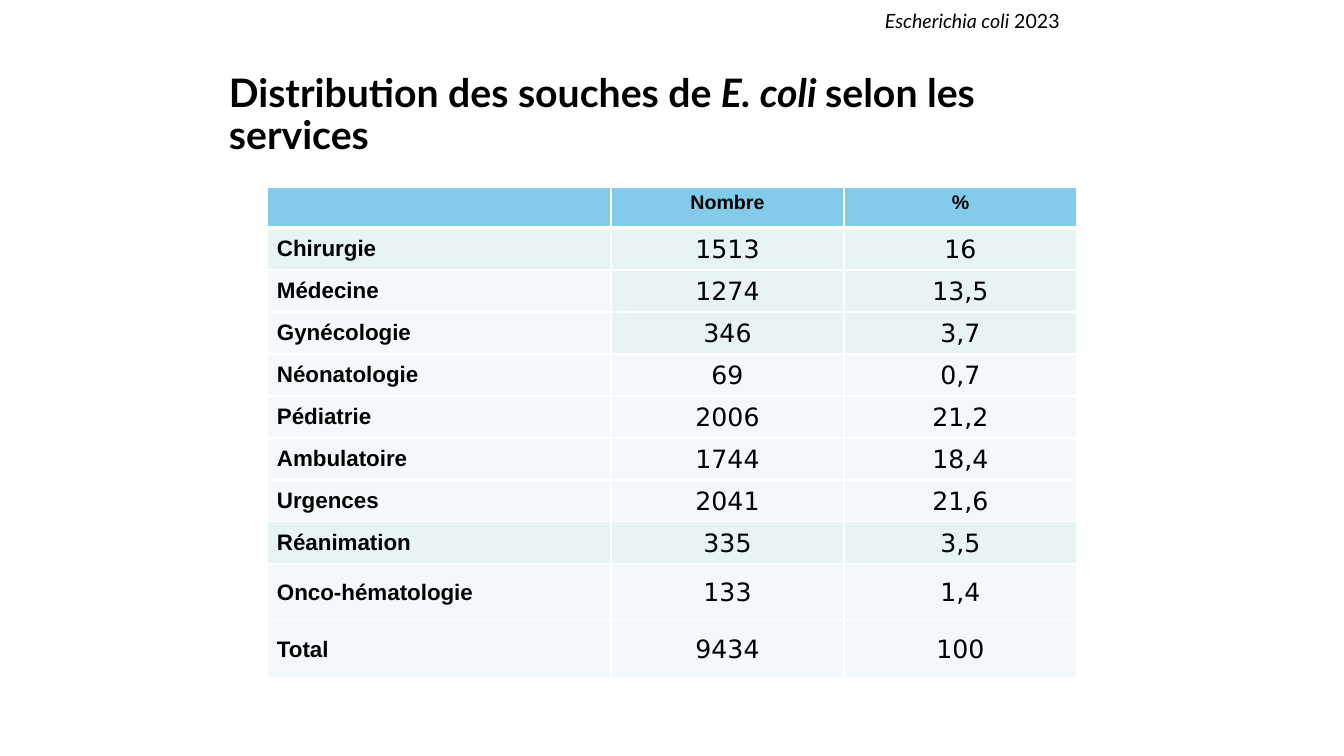
import lxml.etree
import pptx
import pptx.dml.color
import pptx.enum.text
import pptx.oxml.ns
import pptx.util

ALIGN = pptx.enum.text.PP_ALIGN
ANCHOR = pptx.enum.text.MSO_ANCHOR
EMU_PER_PX = 914400 / 100.8

COLORS = {
    "text": "000000",
    "border": "FFFFFF",
    "header": "83CBEB",
    "tint": "E7F3F4",
    "pale": "F3F9FA",
}

# Service, count, percentage, label fill, value fill
SERVICES = [
    ("Chirurgie", "1513", "16", "tint", "tint"),
    ("Médecine", "1274", "13,5", "pale", "tint"),
    ("Gynécologie", "346", "3,7", "pale", "tint"),
    ("Néonatologie", "69", "0,7", "pale", "pale"),
    ("Pédiatrie", "2006", "21,2", "pale", "pale"),
    ("Ambulatoire", "1744", "18,4", "pale", "pale"),
    ("Urgences", "2041", "21,6", "pale", "pale"),
    ("Réanimation", "335", "3,5", "tint", "tint"),
    ("Onco-hématologie", "133", "1,4", "pale", "pale"),
    ("Total", "9434", "100", "pale", "pale"),
]
COLUMN_WIDTHS = [344, 233, 233]
ROW_HEIGHTS = [41] + [42] * 8 + [57] * 2


def px(length):
    return pptx.util.Emu(round(length * EMU_PER_PX))


def color(name):
    return pptx.dml.color.RGBColor.from_string(COLORS[name])


class SlideBuilder:
    def __init__(self, presentation):
        self.slide = presentation.slides.add_slide(presentation.slide_layouts[6])

    def add_run(self, paragraph, text, size, font="Lato", bold=False, italic=False):
        run = paragraph.add_run()
        run.text = text
        run.font.size = pptx.util.Pt(size)
        run.font.name = font
        run.font.bold = bold
        run.font.italic = italic
        run.font.color.rgb = color("text")

    def text(self, box, runs, size, bold=False, anchor=ANCHOR.TOP, spacing=1.0):
        shape = self.slide.shapes.add_textbox(*map(px, box))
        frame = shape.text_frame
        frame.word_wrap = True
        frame.vertical_anchor = anchor
        paragraph = frame.paragraphs[0]
        paragraph.line_spacing = spacing
        for text, italic in runs:
            self.add_run(paragraph, text, size, bold=bold, italic=italic)

    def table(self, left, top, widths, heights):
        table = self.slide.shapes.add_table(
            len(heights), len(widths), px(left), px(top),
            px(sum(widths)), px(sum(heights))).table
        for column, width in zip(table.columns, widths):
            column.width = px(width)
        for row, height in zip(table.rows, heights):
            row.height = px(height)
        return table

    def cell(self, cell, text, fill, size, font="Arial", bold=True, align=ALIGN.CENTER,
             anchor=ANCHOR.MIDDLE, margins=(10, 5, 10, 5), top=1, bottom=1):
        cell.fill.solid()
        cell.fill.fore_color.rgb = color(fill)
        cell.vertical_anchor = anchor
        (cell.margin_left, cell.margin_top,
         cell.margin_right, cell.margin_bottom) = map(px, margins)
        paragraph = cell.text_frame.paragraphs[0]
        paragraph.alignment = align
        if text:
            self.add_run(paragraph, text, size, font, bold)
        self.borders(cell, {"lnL": 1, "lnR": 1, "lnT": top, "lnB": bottom})

    def borders(self, cell, widths):
        qn = pptx.oxml.ns.qn
        properties = cell._tc.get_or_add_tcPr()
        for index, (side, width) in enumerate(widths.items()):
            line = lxml.etree.Element(qn(f"a:{side}"), w=str(pptx.util.Pt(width)))
            fill = lxml.etree.SubElement(line, qn("a:solidFill"))
            lxml.etree.SubElement(fill, qn("a:srgbClr"), val=COLORS["border"])
            properties.insert(index, line)


def main():
    presentation = pptx.Presentation()
    presentation.slide_width = px(1344)
    presentation.slide_height = px(756)
    builder = SlideBuilder(presentation)

    # Title
    builder.text(
        (219, 53, 907, 126),
        [("Distribution des souches de ", False), ("E. coli ", True),
         ("selon les services", False)],
        28, bold=True, anchor=ANCHOR.MIDDLE, spacing=0.9)

    # Table header
    table = builder.table(267, 187, COLUMN_WIDTHS, ROW_HEIGHTS)
    for column, heading in enumerate(["", "Nombre", "%"]):
        builder.cell(table.cell(0, column), heading, "header", 14,
                     anchor=ANCHOR.TOP, bottom=3)

    # Table body
    for row, (service, count, percent, label_fill, value_fill) in enumerate(SERVICES, 1):
        top = 3 if row == 1 else 1
        builder.cell(table.cell(row, 0), service, label_fill, 16,
                     align=ALIGN.LEFT, top=top)
        for column, value in enumerate([count, percent], 1):
            builder.cell(table.cell(row, column), value, value_fill, 18, "DejaVu Sans",
                         bold=False, margins=(1, 1, 1, 0), top=top)

    # Running head
    builder.text((875, 4, 254, 34), [("Escherichia coli ", True), ("2023", False)], 14)

    presentation.save("out.pptx")


if __name__ == "__main__":
    main()
